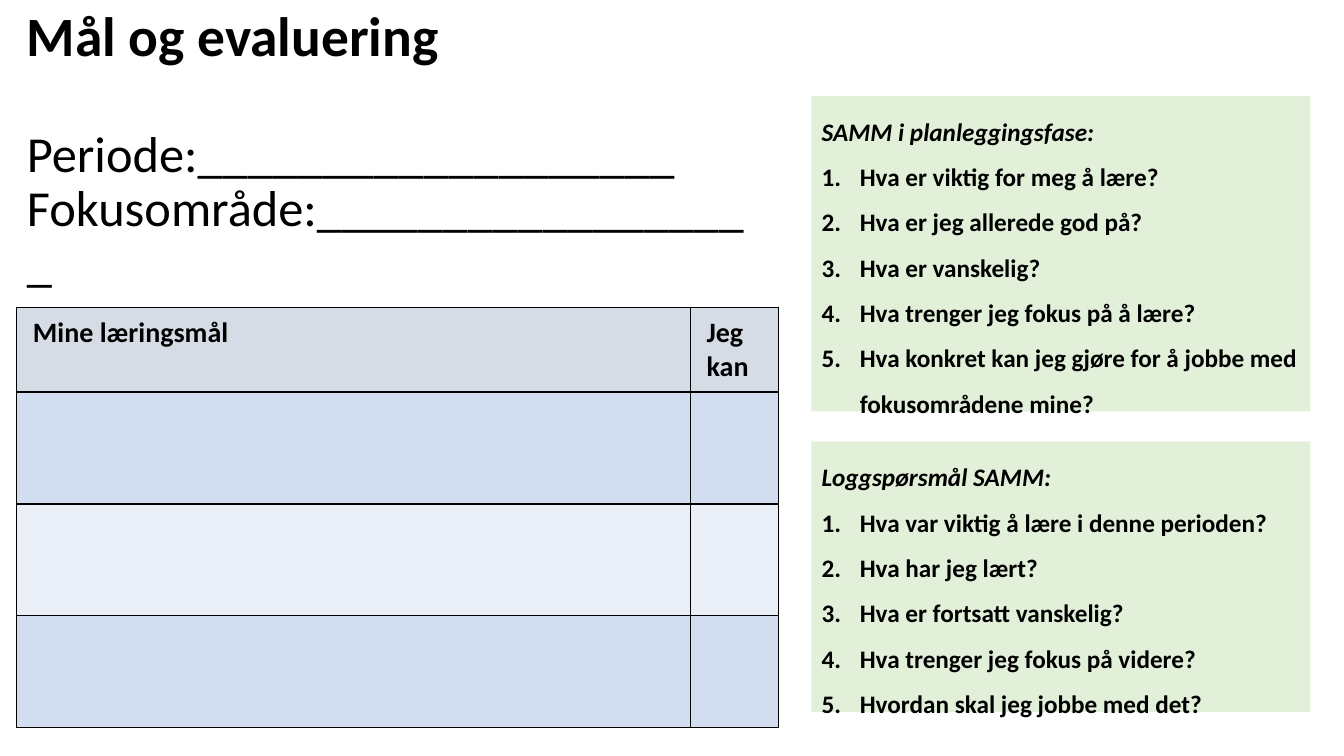
from dataclasses import dataclass

import pptx
import pptx.dml.color
import pptx.enum.text
import pptx.oxml
import pptx.oxml.ns
import pptx.util


@dataclass(frozen=True)
class Theme:
    font: str = "Calibri"
    ink: str = "000000"
    header: str = "D6DCE5"
    bands: tuple = ("D2DEEF", "EAEFF7")
    panel: str = "E2F0D9"
    title_size: float = 39.6
    field_size: float = 36
    header_size: float = 20
    list_size: float = 18
    border: float = 1


class SlideBuilder:
    """Places elements on a grid of 80 columns by 45 rows."""

    COLUMNS, ROWS = 80, 45

    def __init__(self, presentation, theme):
        self.theme = theme
        self.width = presentation.slide_width
        self.height = presentation.slide_height
        # Two Content layout: a title and two bodies
        self.slide = presentation.slides.add_slide(presentation.slide_layouts[3])

    def across(self, columns):
        return round(self.width * columns / self.COLUMNS)

    def down(self, rows):
        return round(self.height * rows / self.ROWS)

    def place(self, shape, left, top, width, height):
        shape.left, shape.top = self.across(left), self.down(top)
        shape.width, shape.height = self.across(width), self.down(height)

    def color(self, value):
        return pptx.dml.color.RGBColor.from_string(value)

    def fill(self, target, value):
        target.fill.solid()
        target.fill.fore_color.rgb = self.color(value)

    def style(self, paragraph, size, bold=True, italic=False):
        for run in paragraph.runs:
            run.font.name = self.theme.font
            run.font.size = pptx.util.Pt(size)
            run.font.bold, run.font.italic = bold, italic
            run.font.color.rgb = self.color(self.theme.ink)

    def title(self, heading, fields, area):
        shape = self.slide.shapes.title
        self.place(shape, *area)
        frame = shape.text_frame
        frame.text = "\n".join([heading, *fields])
        frame.word_wrap = True
        frame.auto_size = pptx.enum.text.MSO_AUTO_SIZE.NONE
        frame.vertical_anchor = pptx.enum.text.MSO_ANCHOR.MIDDLE
        frame.margin_bottom = pptx.util.Inches(0.6)
        for index, paragraph in enumerate(frame.paragraphs):
            paragraph.alignment = pptx.enum.text.PP_ALIGN.LEFT
            paragraph.line_spacing = 0.9
            paragraph.space_before = pptx.util.Pt(43.5 if index == 1 else 0)
            size = self.theme.field_size if index else self.theme.title_size
            self.style(paragraph, size, bold=index == 0)

    def question_panel(self, number, heading, questions, area):
        shape = self.slide.placeholders[number]
        self.place(shape, *area)
        self.fill(shape, self.theme.panel)
        frame = shape.text_frame
        frame.text = "\n".join([heading, *questions])
        frame.word_wrap = True
        frame.auto_size = pptx.enum.text.MSO_AUTO_SIZE.SHAPE_TO_FIT_TEXT
        frame.vertical_anchor = pptx.enum.text.MSO_ANCHOR.TOP
        for index, paragraph in enumerate(frame.paragraphs):
            self.number(paragraph, numbered=index > 0)
            paragraph.line_spacing = 1.5
            paragraph.space_before = pptx.util.Pt(0)
            self.style(paragraph, self.theme.list_size, italic=index == 0)

    def number(self, paragraph, numbered):
        properties = paragraph._p.get_or_add_pPr()
        indent = pptx.util.Inches(0.38) if numbered else 0
        properties.set("marL", str(indent))
        properties.set("indent", str(-indent))
        if numbered:
            bullet = '<a:buAutoNum %s type="arabicPeriod"/>'
            font = '<a:buFont %s typeface="+mj-lt"/>' % pptx.oxml.ns.nsdecls("a")
            properties.append(pptx.oxml.parse_xml(font))
        else:
            bullet = "<a:buNone %s/>"
        properties.append(pptx.oxml.parse_xml(bullet % pptx.oxml.ns.nsdecls("a")))

    def goal_table(self, headers, left, top, widths, heights):
        frame = self.slide.shapes.add_table(
            len(heights), len(widths), self.across(left), self.down(top),
            self.across(sum(widths)), self.down(sum(heights)))
        table = frame.table
        for column, width in zip(table.columns, widths):
            column.width = self.across(width)
        for index, (row, height) in enumerate(zip(table.rows, heights)):
            row.height = self.down(height)
            band = self.theme.bands[(index - 1) % 2] if index else self.theme.header
            for cell in row.cells:
                self.border(cell)
                self.fill(cell, band)
                cell.margin_left = cell.margin_right = pptx.util.Inches(0.16)
                cell.margin_top = cell.margin_bottom = pptx.util.Inches(0.08)
        for cell, text in zip(table.rows[0].cells, headers):
            cell.text_frame.text = text
            self.style(cell.text_frame.paragraphs[0], self.theme.header_size)

    def border(self, cell):
        properties = cell._tc.get_or_add_tcPr()
        for side in ("lnL", "lnR", "lnT", "lnB"):
            properties.append(pptx.oxml.parse_xml(
                f'<a:{side} {pptx.oxml.ns.nsdecls("a")} '
                f'w="{pptx.util.Pt(self.theme.border)}"><a:solidFill>'
                f'<a:srgbClr val="{self.theme.ink}"/></a:solidFill></a:{side}>'))


def main():
    presentation = pptx.Presentation()
    presentation.slide_width = pptx.util.Inches(13.33)
    presentation.slide_height = pptx.util.Inches(7.5)
    builder = SlideBuilder(presentation, Theme())

    # Heading with fields to fill in
    builder.title("Mål og evaluering",
                  ["Periode:" + "_" * 19, "Fokusområde:" + "_" * 18],
                  (1, 4.92, 45.36, 11.34))

    # Learning goals
    builder.goal_table(["Mine læringsmål", "Jeg kan"], 1, 18.3,
                       widths=[40.1, 5.26], heights=[5.04] + [6.66] * 3)

    # Questions for planning and for the log
    builder.question_panel(1, "SAMM i planleggingsfase:", [
        "Hva er viktig for meg å lære?",
        "Hva er jeg allerede god på?",
        "Hva er vanskelig?",
        "Hva trenger jeg fokus på å lære?",
        "Hva konkret kan jeg gjøre for å jobbe med fokusområdene mine?",
    ], (48.3, 5.7, 29.7, 19.38))
    builder.question_panel(2, "Loggspørsmål SAMM:", [
        "Hva var viktig å lære i denne perioden?",
        "Hva har jeg lært?",
        "Hva er fortsatt vanskelig?",
        "Hva trenger jeg fokus på videre?",
        "Hvordan skal jeg jobbe med det?",
    ], (48.3, 26.28, 29.7, 16.68))

    presentation.save("out.pptx")


if __name__ == "__main__":
    main()
